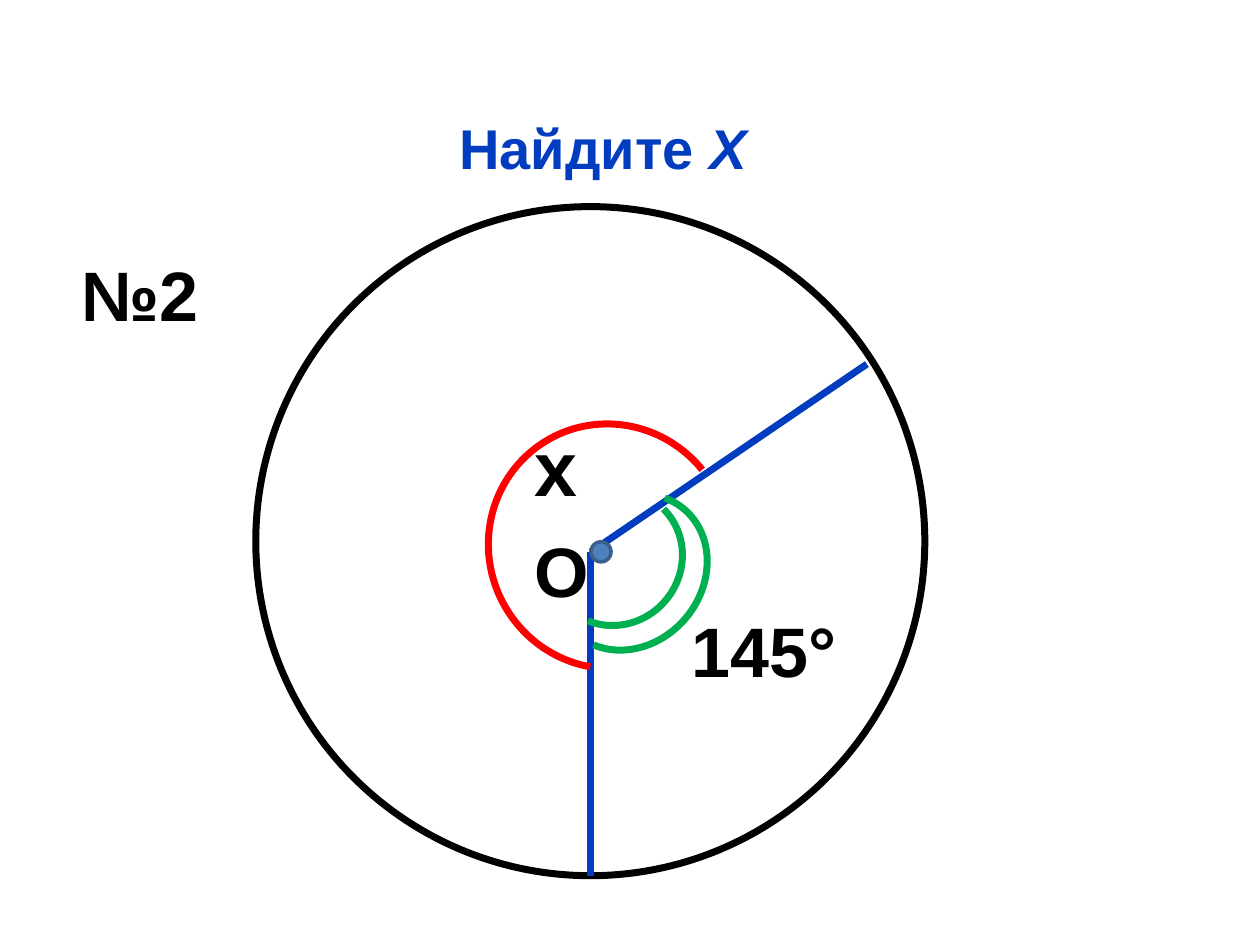
from dataclasses import dataclass

from lxml.etree import SubElement
from pptx import Presentation
from pptx.dml.color import RGBColor
from pptx.enum.shapes import MSO_CONNECTOR, MSO_SHAPE
from pptx.enum.text import MSO_ANCHOR, MSO_AUTO_SIZE, PP_ALIGN
from pptx.oxml.ns import qn
from pptx.util import Inches, Pt


@dataclass(frozen=True)
class Theme:
    font: str = "Arial"
    blue: str = "033DBF"
    black: str = "000000"
    white: str = "FFFFFF"
    green: str = "00B050"
    red: str = "FF0000"
    dot_fill: str = "4F81BD"
    dot_line: str = "3A5F8C"
    title_size: int = 32
    label_size: int = 40
    unknown_size: int = 44
    stroke: int = 4
    dot_stroke: int = 2


THEME = Theme()


def rgb(value):
    return RGBColor.from_string(value)


def add_text(paragraph, text, size=THEME.label_size, color=THEME.black, italic=None):
    run = paragraph.add_run()
    run.text = text
    run.font.name = THEME.font
    run.font.size = Pt(size)
    run.font.bold = True
    run.font.italic = italic
    run.font.color.rgb = rgb(color)


def set_line(line, color, width=THEME.stroke):
    line.color.rgb = rgb(color)
    line.width = Pt(width)


def set_title(slide, box):
    title = slide.shapes.title
    title.left, title.top, title.width, title.height = map(Inches, box)
    title.text_frame.vertical_anchor = MSO_ANCHOR.MIDDLE
    heading = title.text_frame.paragraphs[0]
    heading.alignment = PP_ALIGN.CENTER
    add_text(heading, "Найдите ", size=THEME.title_size, color=THEME.blue)
    add_text(heading, "Х", size=THEME.title_size, color=THEME.blue, italic=True)


def add_label(slide, text, box, wrap=True, **text_format):
    label = slide.shapes.add_textbox(*map(Inches, box))
    label.text_frame.word_wrap = wrap
    label.text_frame.auto_size = MSO_AUTO_SIZE.SHAPE_TO_FIT_TEXT
    add_text(label.text_frame.paragraphs[0], text, **text_format)


def add_circle(slide, left, top, diameter, fill, line, width=THEME.stroke):
    circle = slide.shapes.add_shape(
        MSO_SHAPE.OVAL, *map(Inches, (left, top, diameter, diameter)))
    circle.shadow.inherit = False
    circle.fill.solid()
    circle.fill.fore_color.rgb = rgb(fill)
    set_line(circle.line, line, width)


def add_radius(slide, rim, center):
    radius = slide.shapes.add_connector(
        MSO_CONNECTOR.STRAIGHT, *map(Inches, (*rim, *center)))
    set_line(radius.line, THEME.blue)
    SubElement(radius._element.spPr, qn("a:effectLst"))


def add_angle_arc(slide, box, rotation, start, end, color):
    arc = slide.shapes.add_shape(MSO_SHAPE.ARC, *map(Inches, box))
    arc.shadow.inherit = False
    arc.fill.background()
    arc.rotation = rotation
    for index, degrees in enumerate((start, end)):
        arc.adjustments[index] = degrees * 60000 / 100000
    set_line(arc.line, color)


def main():
    presentation = Presentation()
    presentation.slide_width, presentation.slide_height = Inches(10), Inches(7.5)
    slide = presentation.slides.add_slide(presentation.slide_layouts[5])
    set_title(slide, (0.7, 0.84, 8.17, 0.65))

    add_circle(slide, 2.03, 1.64, 5.31, THEME.white, THEME.black)
    center = (4.69, 4.38)
    for rim in ((6.88, 2.89), (4.69, 6.95)):
        add_radius(slide, rim, center)

    add_angle_arc(slide, (4.35, 3.97, 1.31, 1.14), 130.7, 164.07, 346.3, THEME.green)
    add_angle_arc(slide, (4.34, 3.91, 1.09, 1.04), 130.7, 183.59, 342.99, THEME.green)
    add_angle_arc(slide, (3.86, 3.38, 1.95, 1.91), 243.6, 215.24, 76.94, THEME.red)

    add_label(slide, "x", (4.14, 3.28, 0.62, 0.84), size=THEME.unknown_size)
    add_label(slide, "145°", (5.39, 4.77, 1.8, 0.77))
    add_label(slide, "№2", (0.55, 1.95, 1.25, 0.77))
    add_label(slide, "О", (4.14, 4.14, 0.64, 0.77), wrap=False)
    add_circle(slide, 4.69, 4.3, 0.16, THEME.dot_fill, THEME.dot_line, THEME.dot_stroke)

    presentation.save("out.pptx")


if __name__ == "__main__":
    main()
